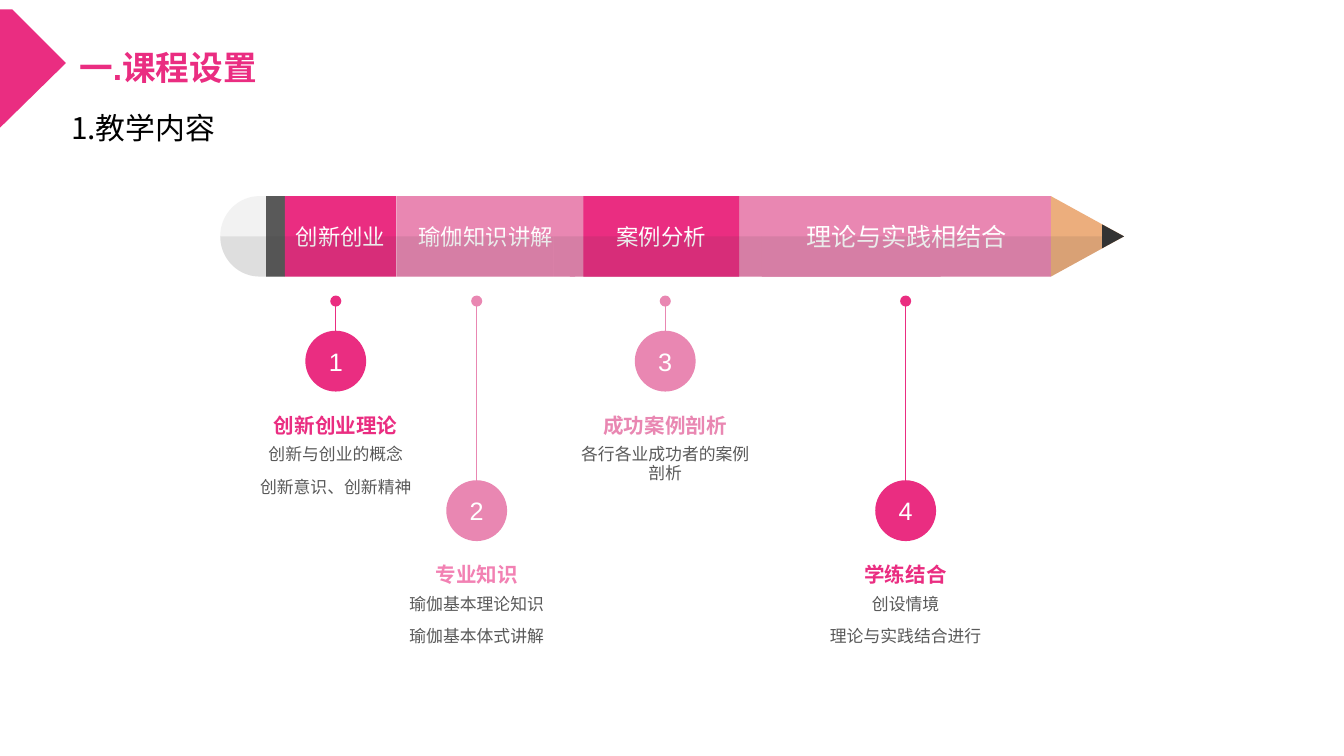
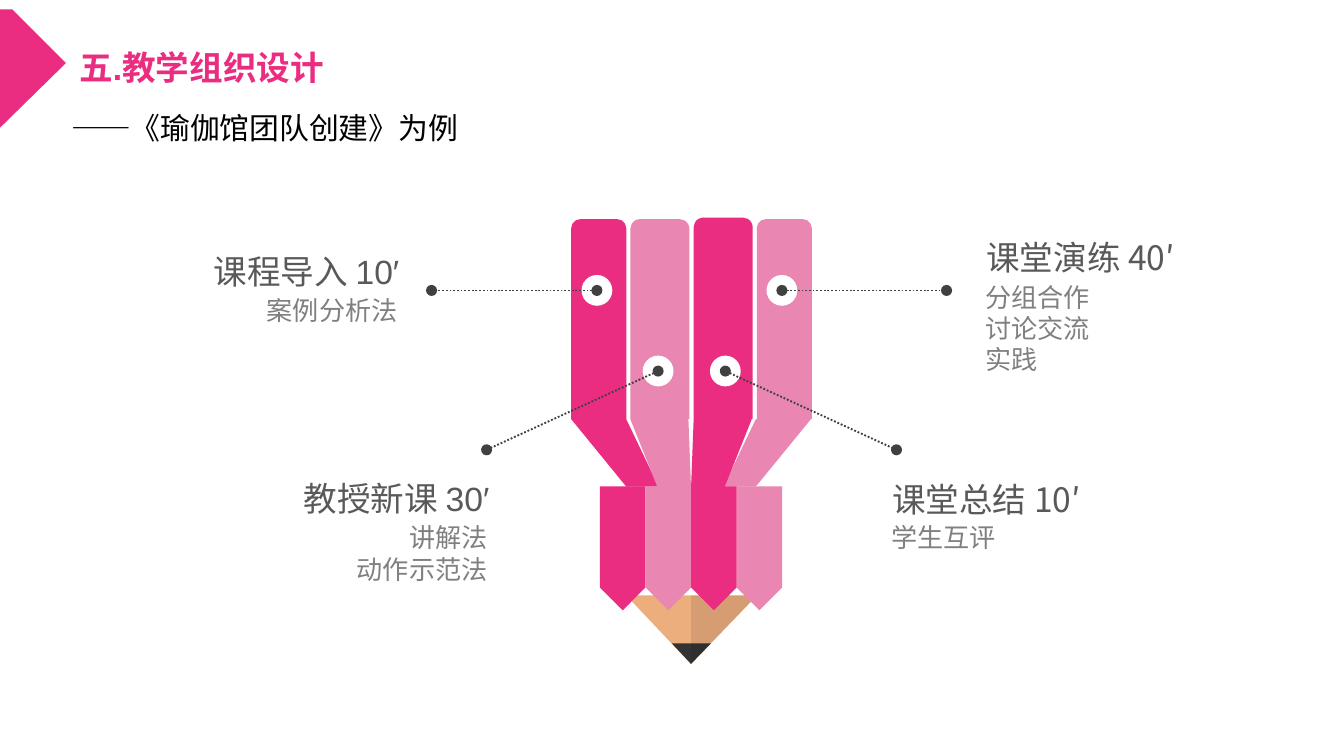
from math import cos, pi, sin

from lxml.etree import SubElement
from pptx import Presentation
from pptx.dml.color import RGBColor
from pptx.enum.dml import MSO_LINE
from pptx.enum.shapes import MSO_CONNECTOR, MSO_SHAPE
from pptx.enum.text import MSO_ANCHOR, MSO_AUTO_SIZE, PP_ALIGN
from pptx.oxml.ns import qn
from pptx.util import Pt

PINK, LIGHT, ROSE = "EA2D81", "E987B2", "F281B3"
WOOD, LEAD, WHITE, CAP, FERRULE = "ECAE7D", "333333", "FFFFFF", "F2F2F2", "595959"
DARK, GREY, WIRE, BLACK, SHADE = "595959", "808080", "404040", "000000", "0D0D0D"
LATIN, HAN = "Arial", "Noto Sans CJK SC"
INSETS = (5, 2.9)

CORNER = [(0, 5), (0, 68.4), (35.3, 33.8), (6.5, 5)]

PENCIL_TOP, PENCIL_HALF = 105.1, 21.55
PENCIL_MIDDLE = PENCIL_TOP + PENCIL_HALF
PENCIL_BOTTOM = PENCIL_MIDDLE + PENCIL_HALF
CAP_LEFT, CAP_RADIUS, CAP_RIGHT = 118, 21.1, 144.7
FERRULE_LEFT, BODY_LEFT, BODY_RIGHT, TIP = 142.6, 152.6, 563, 602.2
LEAD_LEFT, LEAD_HALF = 590.4, 6.4

# left, right, shade left, shade right, colour, label, size
BANDS = [
    (152.6, 212.3, 152.6, 212.3, PINK, "创新创业", 12),
    (212.3, 308.2, 212.3, 296.7, LIGHT, "瑜伽知识讲解", 12),
    (305.3, 504, 296.7, 504, LIGHT, "", 12),
    (312.6, 396, 312.6, 396, PINK, "案例分析", 12),
    (408.2, 563, 408.2, 563, LIGHT, "理论与实践相结合", 13.5),
]

TOPICS = [
    ("1", 179.9, 177.2, PINK, PINK, "创新创业理论", ["创新与创业的概念", "创新意识、创新精神"], HAN),
    ("3", 356.4, 177.2, LIGHT, LIGHT, "成功案例剖析", ["各行各业成功者的案例剖析"], LATIN),
    ("2", 255.4, 257.3, LIGHT, ROSE, "专业知识", ["瑜伽基本理论知识", "瑜伽基本体式讲解"], HAN),
    ("4", 485.2, 257.3, PINK, PINK, "学练结合", ["创设情境", "理论与实践结合进行"], LATIN),
]

AXIS, SHOULDER, PLATE_WIDTH = 370.2, 224.6, 24.4
STRIPS = [(306, 117.4, 29.5), (337.7, 117.4, 31.7), (371.6, 116.6, 31.7), (405.4, 117.4, 29.5)]
OUTER_NECK = [(306, 224.6), (335.5, 260.7), (352.8, 260.7), (335.5, 224.6)]
INNER_NECK = [(337.7, 224.6), (352.4, 261.4), (370.2, 261.4), (368.8, 224.6)]
KNOB = 16.5

STAGES = [
    ("课堂演练", "40′", HAN, ["分组合作", "讨论交流", "实践"], HAN, PP_ALIGN.LEFT,
     (523.4, 130.3, 148.3, 14.4), (527.8, 150.5, 139, 51), (418.9, 155.6), (507.1, 155.6)),
    ("课程导入", "10′", LATIN, ["案例分析法"], HAN, PP_ALIGN.RIGHT,
     (100.1, 137.5, 118.8, 15.1), (75.6, 157.7, 137.5, 17.3), (319.8, 155.6), (231.2, 155.6)),
    ("教授新课", "30′", LATIN, ["讲解法", "动作示范法"], HAN, PP_ALIGN.RIGHT,
     (148.3, 259.2, 118.8, 15.1), (123.8, 279.4, 137.5, 33.8), (352.6, 198.8), (260.7, 241)),
    ("课堂总结", "10′", HAN, ["学生互评"], LATIN, PP_ALIGN.LEFT,
     (473, 259.2, 141.8, 15.8), (477.4, 279.4, 139, 17.3), (388.6, 198.8), (480.3, 241)),
]


def hue(value):
    """Turn a hex string into a colour."""
    return RGBColor.from_string(value)


def write(frame, lines, size=12, color=WHITE, font=LATIN, bold=False, align=PP_ALIGN.LEFT,
          anchor=MSO_ANCHOR.TOP, insets=(7.2, 3.6), spacing=None, before=None, grow=False):
    """Fill a text frame with formatted paragraphs."""
    frame.word_wrap = True
    frame.auto_size = MSO_AUTO_SIZE.SHAPE_TO_FIT_TEXT if grow else MSO_AUTO_SIZE.NONE
    frame.vertical_anchor = anchor
    frame.margin_left = frame.margin_right = Pt(insets[0])
    frame.margin_top = frame.margin_bottom = Pt(insets[1])
    for index, line in enumerate(lines):
        para = frame.add_paragraph() if index else frame.paragraphs[0]
        para.alignment = align
        if spacing:
            para.line_spacing = spacing
        if before is not None:
            para.space_before = Pt(before)
        span = para.add_run()
        span.text = line
        span.font.size, span.font.name, span.font.bold = Pt(size), font, bold
        span.font.color.rgb = hue(color)


def add_text(slide, place, lines, **style):
    """Add a text box."""
    box = slide.shapes.add_textbox(*map(Pt, place))
    write(box.text_frame, lines, **style)


def paint(shape, color, alpha=None):
    """Give a shape a plain fill, no line and no shadow."""
    shape.shadow.inherit = False
    shape.line.fill.background()
    shape.fill.solid()
    shape.fill.fore_color.rgb = hue(color)
    if alpha:
        tint = next(shape._element.spPr.iter(qn("a:srgbClr")))
        SubElement(tint, qn("a:alpha")).set("val", str(alpha * 1000))
    return shape


def add_preset(slide, kind, place, color, alpha=None):
    """Add a painted preset shape."""
    return paint(slide.shapes.add_shape(kind, *map(Pt, place)), color, alpha)


def add_outline(slide, points, color, alpha=None):
    """Add a painted polygon."""
    corners = [(Pt(x), Pt(y)) for x, y in points]
    builder = slide.shapes.build_freeform(*corners[0], scale=1.0)
    builder.add_line_segments(corners[1:], close=True)
    return paint(builder.convert_to_shape(), color, alpha)


def add_wire(slide, start, end, color, width, ends, dash=None):
    """Add a line with round ends."""
    wire = slide.shapes.add_connector(MSO_CONNECTOR.STRAIGHT, *map(Pt, start + end))
    wire.line.color.rgb = hue(color)
    wire.line.width = Pt(width)
    if dash:
        wire.line.dash_style = dash
    properties = wire._element.spPr
    for name in ends:
        SubElement(properties.find(qn("a:ln")), qn(f"a:{name}")).set("type", "oval")
    SubElement(properties, qn("a:effectLst"))


def start_slide(deck, title, subtitle):
    """Add a slide with its heading and corner arrow."""
    slide = deck.slides.add_slide(deck.slide_layouts[5])
    box = slide.shapes.title
    box.left, box.top, box.width, box.height = map(Pt, (35.3, 17.3, 300.2, 33.1))
    write(box.text_frame, [title], size=18, color=PINK, bold=True, spacing=1.2, before=10, grow=True)
    add_outline(slide, CORNER, PINK)
    add_text(slide, (31, 55.4, 360, 26.6), [subtitle], size=16, color=BLACK, font=HAN, grow=True)
    return slide


def add_band(slide, left, right, shade_left, shade_right, color, label, size):
    """Add one coloured length of the pencil with its shaded half."""
    band = add_preset(slide, MSO_SHAPE.RECTANGLE,
                      (left, PENCIL_TOP, right - left, 2 * PENCIL_HALF), color)
    if label:
        write(band.text_frame, [label], size=size, align=PP_ALIGN.CENTER,
              anchor=MSO_ANCHOR.MIDDLE, insets=INSETS)
    add_preset(slide, MSO_SHAPE.RECTANGLE,
               (shade_left, PENCIL_MIDDLE, shade_right - shade_left, PENCIL_HALF), LEAD, 10)


def add_pencil(slide):
    """Draw the lying pencil."""
    arc = [(CAP_LEFT + CAP_RADIUS * (1 - sin(pi * step / 40)),
            PENCIL_MIDDLE - PENCIL_HALF * cos(pi * step / 40)) for step in range(41)]
    add_outline(slide, arc + [(CAP_RIGHT, PENCIL_BOTTOM), (CAP_RIGHT, PENCIL_TOP)], CAP)
    add_preset(slide, MSO_SHAPE.RECTANGLE,
               (FERRULE_LEFT, PENCIL_TOP, BODY_LEFT - FERRULE_LEFT, 2 * PENCIL_HALF), FERRULE)
    add_outline(slide, arc[20:] + [(BODY_LEFT, PENCIL_BOTTOM), (BODY_LEFT, PENCIL_MIDDLE)], LEAD, 10)
    for band in BANDS:
        add_band(slide, *band)
    point = (TIP, PENCIL_MIDDLE)
    add_outline(slide, [point, (BODY_RIGHT, PENCIL_TOP), (BODY_RIGHT, PENCIL_BOTTOM)], WOOD)
    add_outline(slide, [point, (LEAD_LEFT, PENCIL_MIDDLE + LEAD_HALF),
                        (LEAD_LEFT, PENCIL_MIDDLE - LEAD_HALF)], LEAD)
    add_outline(slide, [point, (BODY_RIGHT, PENCIL_BOTTOM), (BODY_RIGHT, PENCIL_MIDDLE)], LEAD, 10)


def add_topic(slide, number, center, top, color, title_color, title, lines, font):
    """Add a numbered topic hanging below the pencil."""
    add_wire(slide, (center, top + 5.6), (center, 161.3), color, 0.5, ["tailEnd"])
    disc = add_preset(slide, MSO_SHAPE.OVAL, (center - 16.3, top, 32.6, 32.6), color)
    write(disc.text_frame, [number], size=13.5, align=PP_ALIGN.CENTER,
          anchor=MSO_ANCHOR.MIDDLE, insets=INSETS)
    style = dict(align=PP_ALIGN.CENTER, insets=(0, 0), spacing=0.9, before=7.5)
    add_text(slide, (center - 45.4, top + 62, 90.7, 31), lines,
             size=9, color=DARK, font=font, **style)
    add_text(slide, (center - 45.7, top + 45.5, 91.4, 13.7), [title],
             size=11, color=title_color, bold=True, **style)


def add_brush(slide):
    """Draw the four strips that merge into one pencil point."""
    tip = (AXIS, 355.7)
    add_outline(slide, [tip, (335.5, 319), (405.5, 319)], WOOD)
    add_outline(slide, [tip, (380.9, 344.7), (359.9, 344.7)], LEAD)
    add_outline(slide, [tip, (405.5, 319), (AXIS, 319)], SHADE, 10)
    necks = [OUTER_NECK, INNER_NECK]
    necks += [[(2 * AXIS - x, y) for x, y in neck] for neck in reversed(necks)]
    for index in (0, 1, 3, 2):
        color = (PINK, LIGHT)[index % 2]
        left, top, width = STRIPS[index]
        middle = AXIS + (index - 1.5) * PLATE_WIDTH
        plate = add_preset(slide, MSO_SHAPE.PENTAGON,
                           (middle - 33.2, 293.8 - PLATE_WIDTH / 2, 66.4, PLATE_WIDTH), color)
        plate.rotation = 90
        add_preset(slide, MSO_SHAPE.ROUND_2_SAME_RECTANGLE,
                   (left, top, width, SHOULDER - top), color)
        add_outline(slide, necks[index], color)


def add_stage(slide, name, minutes, font, lines, body_font, align, head, body, knob, end):
    """Add one lesson stage with its knob, dotted line and text."""
    add_preset(slide, MSO_SHAPE.OVAL,
               (knob[0] - KNOB / 2, knob[1] - KNOB / 2, KNOB, KNOB), WHITE)
    add_wire(slide, knob, end, WIRE, 1, ["headEnd", "tailEnd"], MSO_LINE.ROUND_DOT)
    add_text(slide, head, [f"{name} {minutes}"], size=18, color=DARK, font=font,
             align=align, anchor=MSO_ANCHOR.MIDDLE, insets=INSETS)
    add_text(slide, body, lines, size=14, color=GREY, font=body_font,
             align=align, insets=(0, 0), grow=True)


def main():
    """Build and save the deck."""
    deck = Presentation()
    deck.slide_width, deck.slide_height = Pt(720), Pt(405)
    content = start_slide(deck, "一.课程设置", "1.教学内容")
    add_pencil(content)
    for topic in TOPICS:
        add_topic(content, *topic)
    lesson = start_slide(deck, "五.教学组织设计", "——《瑜伽馆团队创建》为例")
    add_brush(lesson)
    for stage in STAGES:
        add_stage(lesson, *stage)
    deck.save("out.pptx")


if __name__ == "__main__":
    main()
